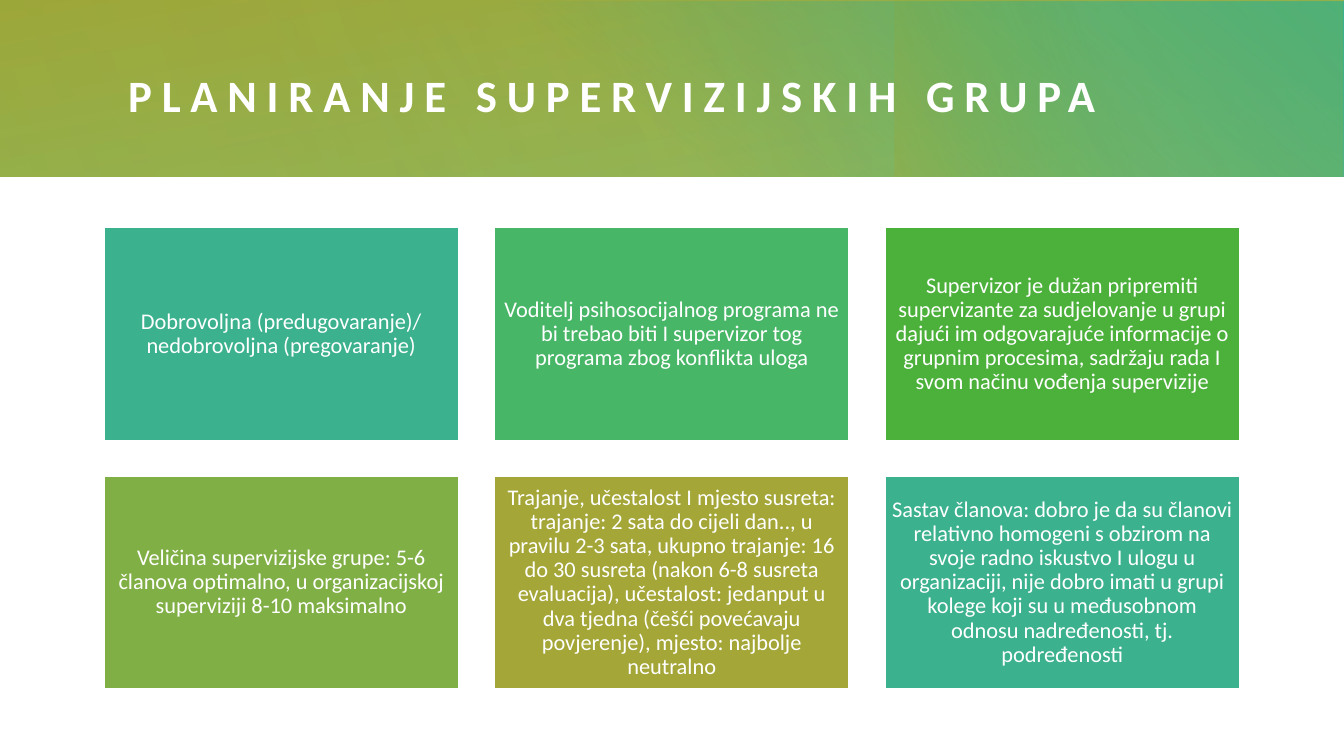
from lxml.etree import SubElement
from pptx import Presentation
from pptx.dml.color import RGBColor
from pptx.enum.shapes import MSO_SHAPE
from pptx.enum.text import MSO_ANCHOR, MSO_AUTO_SIZE, PP_ALIGN
from pptx.oxml.ns import qn
from pptx.util import Cm, Pt

SLIDE_WIDTH, SLIDE_HEIGHT = 33.87, 19.05
BANNER_HEIGHT = 4.45
COLUMNS = 3
CARD_LEFT, CARD_TOP = 2.62, 5.74
CARD_WIDTH, CARD_HEIGHT = 8.94, 5.36
CARD_GAP = 0.9

TEAL, MINT, GREEN = "3BB18D", "47B666", "4CB13B"
LIME, OLIVE, WHITE = "80AF45", "A4A637", "FFFFFF"

BANNER_LAYERS = [
    ((0, 0, SLIDE_WIDTH, BANNER_HEIGHT), 0, 260, [(0, LIME, 83), (100, OLIVE, 100)]),
    ((12.22, 0.03, 21.65, 4.42), 0, 310, [(22, TEAL, 0), (99, TEAL, 100)]),
    ((25.07, -2.52, BANNER_HEIGHT, 9.5), 270, 250, [(45, GREEN, 0), (99, OLIVE, 33)]),
    ((6.81, 0, 27.03, BANNER_HEIGHT), 180, 330, [(0, LIME, 30), (99, LIME, 0)]),
    ((0, 0, 21.97, BANNER_HEIGHT), 0, 340, [(0, LIME, 21), (99, LIME, 0)]),
]

CARDS = [
    ("Dobrovoljna (predugovaranje)/ nedobrovoljna (pregovaranje)", TEAL),
    ("Voditelj psihosocijalnog programa ne bi trebao biti I supervizor tog "
     "programa zbog konflikta uloga", MINT),
    ("Supervizor je dužan pripremiti supervizante za sudjelovanje u grupi dajući im "
     "odgovarajuće informacije o grupnim procesima, sadržaju rada I svom načinu "
     "vođenja supervizije", GREEN),
    ("Veličina supervizijske grupe: 5-6 članova optimalno, u organizacijskoj "
     "superviziji 8-10 maksimalno", LIME),
    ("Trajanje, učestalost I mjesto susreta: trajanje: 2 sata do cijeli dan.., u "
     "pravilu 2-3 sata, ukupno trajanje: 16 do 30 susreta (nakon 6-8 susreta "
     "evaluacija), učestalost: jedanput u dva tjedna (češći povećavaju povjerenje), "
     "mjesto: najbolje neutralno", OLIVE),
    ("Sastav članova: dobro je da su članovi relativno homogeni s obzirom na svoje "
     "radno iskustvo I ulogu u organizaciji, nije dobro imati u grupi kolege koji su "
     "u međusobnom odnosu nadređenosti, tj. podređenosti", TEAL),
]


def color(hex_code):
    """Return the colour for a hex string."""
    return RGBColor.from_string(hex_code)


def add_rectangle(slide, left, top, width, height):
    """Add a rectangle without a shadow, measured in centimetres."""
    shape = slide.shapes.add_shape(
        MSO_SHAPE.RECTANGLE, Cm(left), Cm(top), Cm(width), Cm(height))
    shape.shadow.inherit = False
    return shape


def write_text(shape, text, size, bold=False, align=PP_ALIGN.LEFT,
               line_spacing=1.0, margin=0, tracking=0):
    """Write one white, vertically centred paragraph into a shape."""
    frame = shape.text_frame
    frame.word_wrap = True
    frame.auto_size = MSO_AUTO_SIZE.NONE
    frame.vertical_anchor = MSO_ANCHOR.MIDDLE
    frame.margin_left = frame.margin_right = Cm(margin)
    frame.margin_top = frame.margin_bottom = Cm(margin)
    paragraph = frame.paragraphs[0]
    paragraph.alignment = align
    paragraph.line_spacing = line_spacing
    run = paragraph.add_run()
    run.text = text
    run.font.name = "Calibri"
    run.font.size = Pt(size)
    run.font.bold = bold
    run.font.color.rgb = color(WHITE)
    if tracking:
        run.font._element.set("spc", str(tracking * 100))


def add_gradient_layer(slide, box, rotation, angle, stops):
    """Add a rectangle with a linear gradient of (position, colour, opacity) stops."""
    shape = add_rectangle(slide, *box)
    shape.rotation = rotation
    shape.line.fill.background()
    shape.fill.gradient()
    gradient = shape._element.spPr.find(qn("a:gradFill"))
    for child in list(gradient):
        gradient.remove(child)
    gradient.set("rotWithShape", "1")
    stop_list = SubElement(gradient, qn("a:gsLst"))
    for position, hex_code, opacity in stops:
        stop = SubElement(stop_list, qn("a:gs"), pos=str(position * 1000))
        stop_color = SubElement(stop, qn("a:srgbClr"), val=hex_code)
        SubElement(stop_color, qn("a:alpha"), val=str(opacity * 1000))
    SubElement(gradient, qn("a:lin"), ang=str(angle * 60000), scaled="0")


def place_title(slide, text):
    """Move the title placeholder onto the banner, in front of its layers."""
    title = slide.shapes.title
    title.left, title.top = Cm(3.23), Cm(1.04)
    title.width, title.height = Cm(28.83), Cm(2.69)
    write_text(title, text, size=32, bold=True, tracking=7)
    slide.shapes._spTree.append(title._element)


def add_card(slide, index, text, hex_code):
    """Add a coloured text card at its place in the grid."""
    row, column = divmod(index, COLUMNS)
    card = add_rectangle(
        slide,
        CARD_LEFT + column * (CARD_WIDTH + CARD_GAP),
        CARD_TOP + row * (CARD_HEIGHT + CARD_GAP),
        CARD_WIDTH, CARD_HEIGHT)
    card.fill.solid()
    card.fill.fore_color.rgb = color(hex_code)
    card.line.color.rgb = color(WHITE)
    card.line.width = Pt(1)
    write_text(card, text, size=16, align=PP_ALIGN.CENTER, line_spacing=0.9, margin=0.17)


def main():
    """Build the slide and save it."""
    presentation = Presentation()
    presentation.slide_width = Cm(SLIDE_WIDTH)
    presentation.slide_height = Cm(SLIDE_HEIGHT)
    slide = presentation.slides.add_slide(
        presentation.slide_layouts.get_by_name("Title Only"))
    for layer in BANNER_LAYERS:
        add_gradient_layer(slide, *layer)
    place_title(slide, "PLANIRANJE SUPERVIZIJSKIH GRUPA")
    for index, (text, hex_code) in enumerate(CARDS):
        add_card(slide, index, text, hex_code)
    presentation.save("out.pptx")


if __name__ == "__main__":
    main()
